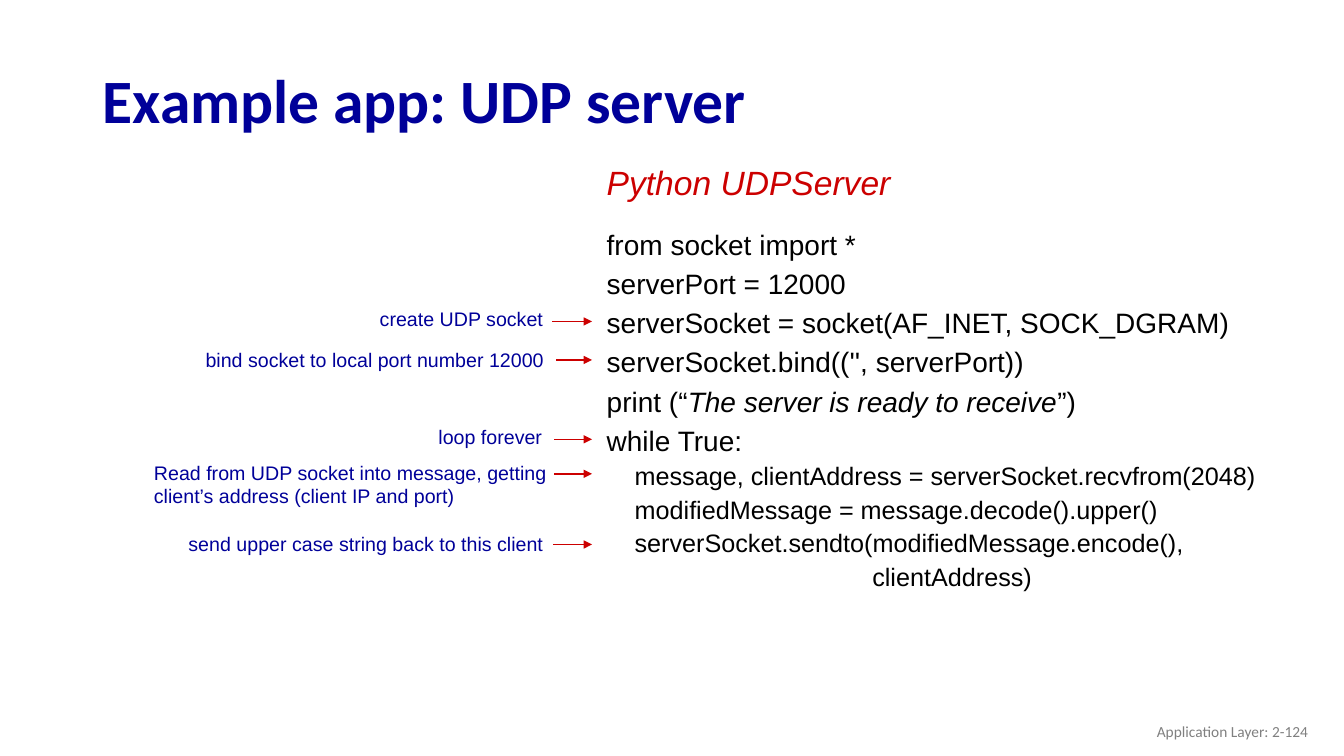
"""Build the slide that walks through a UDP server in Python."""
from dataclasses import dataclass

from lxml import etree
from pptx import Presentation
from pptx.dml.color import RGBColor
from pptx.enum.shapes import MSO_CONNECTOR
from pptx.enum.text import MSO_ANCHOR, PP_ALIGN
from pptx.oxml.ns import qn
from pptx.util import Cm, Pt

STRAIGHT = MSO_CONNECTOR.STRAIGHT
TOP, MIDDLE = MSO_ANCHOR.TOP, MSO_ANCHOR.MIDDLE
LEFT, RIGHT = PP_ALIGN.LEFT, PP_ALIGN.RIGHT


@dataclass(frozen=True)
class Theme:
    navy: str = "000099"
    red: str = "CC0000"
    black: str = "000000"
    grey: str = "808080"
    heading_font: str = "Calibri"
    body_font: str = "Arial"
    title_size: int = 44
    caption_size: int = 24
    code_size: int = 20
    nested_size: int = 18
    note_size: int = 14
    footer_size: int = 11


CODE_LEFT = 15.04
ARROW_END = 14.92
MAIN_CODE = [
    ["from socket import *"],
    ["serverPort = 12000"],
    ["serverSocket = socket(AF_INET, SOCK_DGRAM)"],
    ["serverSocket.bind(('', serverPort))"],
    ["print (“", "The server is ready to receive", "”)"],
    ["while True:"],
]
LOOP_CODE = [
    "    message, clientAddress = serverSocket.recvfrom(2048)",
    "    modifiedMessage = message.decode().upper()",
    "    serverSocket.sendto(modifiedMessage.encode(),",
    "                                      clientAddress)",
]
NOTES = [
    ("create UDP socket", (9.32, 7.62, 7.11, 0.86), (13.92, 8.1), None),
    ("bind socket to local port number 12000", (4.93, 8.64, 10.01, 0.86), (14.02, 9.07), None),
    ("loop forever", (10.8, 10.62, 3.33, 0.84), (13.97, 11.07), 16),
    ("Read from UDP socket into message, getting client’s address (client IP and port)",
     (3.63, 11.53, 10.67, 1.4), (13.97, 11.94), 16),
    ("send upper case string back to this client", (4.5, 13.28, 10.67, 0.86), (13.94, 13.72), None),
]


def write(paragraph, text, *, size, color, font, bold=False, italic=False,
          align=LEFT, spacing=None):
    """Append formatted text to a paragraph."""
    paragraph.alignment = align
    if spacing:
        paragraph.line_spacing = Pt(spacing)
    run = paragraph.add_run()
    run.text = text
    run.font.size = Pt(size)
    run.font.name = font
    run.font.bold = bold
    run.font.italic = italic
    run.font.color.rgb = RGBColor.from_string(color)


class SlideBuilder:
    """Place styled elements on the current slide."""

    def __init__(self, slide, theme):
        """Keep the slide and its theme."""
        self.slide = slide
        self.theme = theme

    def frame(self, box, anchor=TOP, shapes=None):
        """Return the text frame of a new wrapping text box."""
        home = self.slide.shapes if shapes is None else shapes
        frame = home.add_textbox(*map(Cm, box)).text_frame
        frame.word_wrap = True
        frame.vertical_anchor = anchor
        return frame

    def label(self, text, box, *, anchor=TOP, shapes=None, **style):
        """Add a text box with one paragraph."""
        write(self.frame(box, anchor, shapes).paragraphs[0], text, **style)

    def arrow(self, start, shapes):
        """Add a horizontal arrow that ends beside the code."""
        x, y = start
        arrow = shapes.add_connector(STRAIGHT, Cm(x), Cm(y), Cm(ARROW_END), Cm(y))
        arrow.line.color.rgb = RGBColor.from_string(self.theme.red)
        arrow.line.width = Pt(1)
        etree.SubElement(arrow.line._get_or_add_ln(), qn("a:tailEnd"), type="triangle")
        etree.SubElement(arrow._element.spPr, qn("a:effectLst"))

    def note(self, text, box, start, spacing):
        """Add a grouped explanation with its arrow."""
        shapes = self.slide.shapes.add_group_shape().shapes
        self.label(text, box, shapes=shapes, size=self.theme.note_size,
                   color=self.theme.navy, font=self.theme.body_font, spacing=spacing)
        self.arrow(start, shapes)

    def code(self, box):
        """Add the program listing."""
        theme = self.theme
        frame = self.frame(box)
        lines = [(parts, theme.code_size, 28) for parts in MAIN_CODE]
        lines += [([line], theme.nested_size, 24) for line in LOOP_CODE]
        for number, (parts, size, spacing) in enumerate(lines):
            paragraph = frame.add_paragraph() if number else frame.paragraphs[0]
            for position, part in enumerate(parts):
                write(paragraph, part, size=size, color=theme.black, font=theme.body_font,
                      italic=position == 1, spacing=spacing)


def main():
    """Build and save the presentation."""
    deck = Presentation()
    deck.slide_width, deck.slide_height = Cm(33.87), Cm(19.05)
    theme = Theme()
    builder = SlideBuilder(deck.slides.add_slide(deck.slide_layouts[6]), theme)
    builder.label("Example app: UDP server", (2.34, 1.24, 29.21, 2.49), anchor=MIDDLE,
                  size=theme.title_size, color=theme.navy, font=theme.heading_font, bold=True)
    builder.label("Python UDPServer", (CODE_LEFT, 3.96, 7.75, 1.27), size=theme.caption_size,
                  color=theme.red, font=theme.body_font, italic=True)
    builder.code((CODE_LEFT, 5.46, 17.07, 11.13))
    for note in NOTES:
        builder.note(*note)
    builder.label("Application Layer: 2-124", (25.6, 17.91, 7.62, 1.02), anchor=MIDDLE,
                  size=theme.footer_size, color=theme.grey, font=theme.heading_font, align=RIGHT)
    deck.save("out.pptx")


if __name__ == "__main__":
    main()
